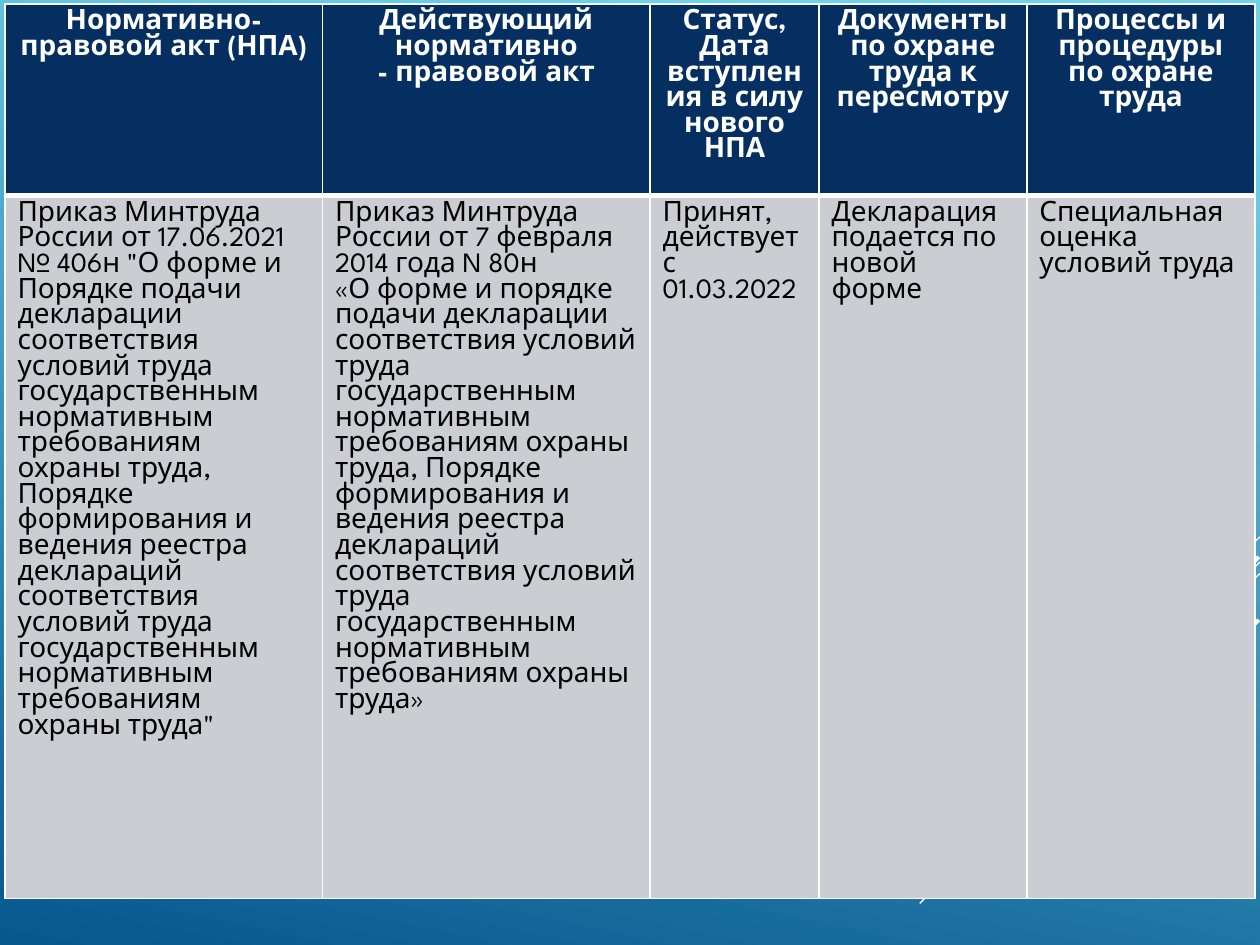
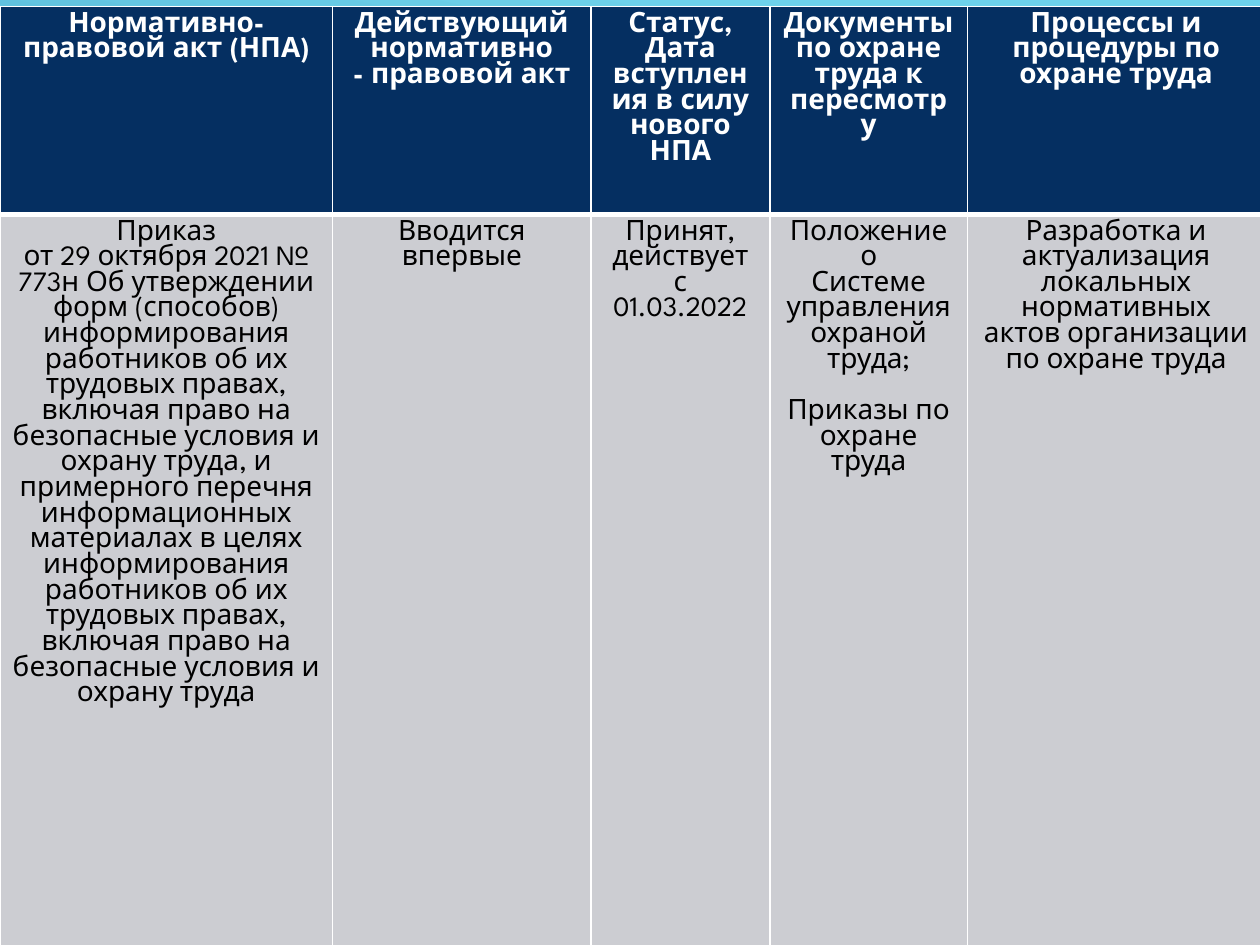
from dataclasses import dataclass

from lxml.etree import SubElement
from pptx import Presentation
from pptx.dml.color import RGBColor
from pptx.enum.shapes import MSO_CONNECTOR
from pptx.enum.text import PP_ALIGN
from pptx.oxml.ns import qn
from pptx.slide import Slide
from pptx.table import _Cell
from pptx.util import Pt

SKY = RGBColor(0x6E, 0xD2, 0xEB)
DEEP_BLUE = RGBColor(0x06, 0x58, 0x8E)
NAVY = RGBColor(0x05, 0x2F, 0x61)
GREY = RGBColor(0xCC, 0xCD, 0xD2)
WHITE = RGBColor(0xFF, 0xFF, 0xFF)
BLACK = RGBColor(0x00, 0x00, 0x00)

FONT = "League Spartan"
TEXT_SIZE = 16
LINE_HEIGHT = 14.7
THIN, THICK = 1, 3


@dataclass(frozen=True)
class Ray:
    start_x: float
    start_y: float
    end_x: float
    end_y: float
    width: float


@dataclass(frozen=True)
class Paragraph:
    text: str
    space_before: float = 0


@dataclass(frozen=True)
class CellStyle:
    fill: RGBColor
    color: RGBColor
    bold: bool
    align: PP_ALIGN
    top_border: float
    bottom_border: float


@dataclass(frozen=True)
class ActTable:
    left: float
    top: float
    columns: tuple[float, ...]
    rows: tuple[float, float]
    body_align: PP_ALIGN
    body: tuple[tuple[Paragraph, ...], ...]


RAYS = (
    Ray(720, 306.7, 660.2, 366.5, 0.75),
    Ray(720, 321.1, 525.6, 516.2, 0.75),
    Ray(720, 327.6, 596.2, 451.4, 0.75),
    Ray(719.3, 318.2, 606.2, 431.3, 2.25),
    Ray(719.3, 354.2, 637.2, 436.3, 2.25),
)

HEADINGS = (
    (Paragraph("Нормативно-правовой акт (НПА)"),),
    (Paragraph("Действующий нормативно"), Paragraph("- правовой акт")),
    (Paragraph("Статус, Дата вступления в силу"), Paragraph("нового НПА")),
    (Paragraph("Документы по охране труда к пересмотру"),),
    (Paragraph("Процессы и процедуры по охране труда"),),
)

TABLES = (
    ActTable(
        left=2.9,
        top=2.2,
        columns=(181.4, 187.2, 96.5, 118.8, 130.3),
        rows=(109.4, 401.8),
        body_align=PP_ALIGN.LEFT,
        body=(
            (Paragraph(
                'Приказ Минтруда России от 17.06.2021 № 406н "О форме и Порядке подачи '
                "декларации соответствия условий труда государственным нормативным "
                "требованиям охраны труда, Порядке формирования и ведения реестра "
                "деклараций соответствия условий труда государственным нормативным "
                'требованиям охраны труда"'),),
            (
                Paragraph("Приказ Минтруда России от 7 февраля 2014 года N 80н"),
                Paragraph(
                    "«О форме и порядке подачи декларации соответствия условий труда "
                    "государственным нормативным требованиям охраны труда, Порядке "
                    "формирования и ведения реестра деклараций соответствия условий "
                    "труда государственным"),
                Paragraph("нормативным требованиям охраны труда»"),
            ),
            (Paragraph("Принят, действует с 01.03.2022"),),
            (Paragraph("Декларация подается по новой форме"),),
            (Paragraph("Специальная оценка условий труда"),),
        ),
    ),
    ActTable(
        left=0,
        top=3.6,
        columns=(190.1, 147.6, 102.2, 113, 169.9),
        rows=(118.8, 452.2),
        body_align=PP_ALIGN.CENTER,
        body=(
            (
                Paragraph("Приказ"),
                Paragraph(
                    "от 29 октября 2021 № 773н Об утверждении форм (способов) "
                    "информирования работников об их трудовых правах, включая право на "
                    "безопасные условия и охрану труда, и примерного перечня "
                    "информационных материалах в целях информирования работников об их "
                    "трудовых правах, включая право на"),
                Paragraph("безопасные условия и охрану труда"),
            ),
            (Paragraph("Вводится впервые"),),
            (Paragraph("Принят, действует"), Paragraph("с 01.03.2022")),
            (
                Paragraph("Положение о"),
                Paragraph("Системе управления охраной труда;"),
                Paragraph("Приказы по охране труда", space_before=LINE_HEIGHT),
            ),
            (Paragraph("Разработка и актуализация локальных нормативных актов "
                       "организации по охране труда"),),
        ),
    ),
)


def paint_background(page: Slide) -> None:
    fill = page.background.fill
    fill.gradient()
    fill.gradient_angle = 258
    for stop, color, position in zip(fill.gradient_stops, (SKY, DEEP_BLUE), (0.1, 1)):
        stop.color.rgb = color
        stop.position = position


def draw_ray(page: Slide, ray: Ray) -> None:
    line = page.shapes.add_connector(
        MSO_CONNECTOR.STRAIGHT,
        Pt(ray.start_x), Pt(ray.start_y), Pt(ray.end_x), Pt(ray.end_y))
    line.line.color.rgb = WHITE
    line.line.width = Pt(ray.width)
    SubElement(line._element.spPr, qn("a:effectLst"))


def set_borders(cell: _Cell, style: CellStyle) -> None:
    """Add white cell borders; must run before the fill, which follows them in the XML."""
    properties = cell._tc.get_or_add_tcPr()
    widths = {"lnL": THIN, "lnR": THIN, "lnT": style.top_border, "lnB": style.bottom_border}
    for side, width in widths.items():
        border = SubElement(properties, qn(f"a:{side}"), w=str(Pt(width)))
        SubElement(SubElement(border, qn("a:solidFill")), qn("a:srgbClr"), val=str(WHITE))


def fill_cell(cell: _Cell, content: tuple[Paragraph, ...], style: CellStyle) -> None:
    set_borders(cell, style)
    cell.fill.solid()
    cell.fill.fore_color.rgb = style.fill
    frame = cell.text_frame
    frame.text = "\n".join(item.text for item in content)
    for paragraph, item in zip(frame.paragraphs, content):
        paragraph.alignment = style.align
        if item.space_before:
            paragraph.space_before = Pt(item.space_before)
        paragraph.font.name = FONT
        paragraph.font.size = Pt(TEXT_SIZE)
        paragraph.font.bold = style.bold
        paragraph.font.color.rgb = style.color


def draw_table(page: Slide, act: ActTable) -> None:
    table = page.shapes.add_table(
        len(act.rows), len(act.columns), Pt(act.left), Pt(act.top),
        Pt(sum(act.columns)), Pt(sum(act.rows))).table
    table.horz_banding = False
    for column, width in zip(table.columns, act.columns):
        column.width = Pt(width)
    for row, height in zip(table.rows, act.rows):
        row.height = Pt(height)

    header = CellStyle(NAVY, WHITE, True, PP_ALIGN.CENTER, THIN, THICK)
    body = CellStyle(GREY, BLACK, False, act.body_align, THICK, THIN)
    for row, contents, style in zip(table.rows, (HEADINGS, act.body), (header, body)):
        for cell, content in zip(row.cells, contents):
            fill_cell(cell, content, style)


def main() -> None:
    deck = Presentation()
    deck.slide_width, deck.slide_height = Pt(720), Pt(540)
    blank = deck.slide_layouts[6]
    for act in TABLES:
        page = deck.slides.add_slide(blank)
        paint_background(page)
        for ray in RAYS:
            draw_ray(page, ray)
        draw_table(page, act)
    deck.save("out.pptx")


if __name__ == "__main__":
    main()
